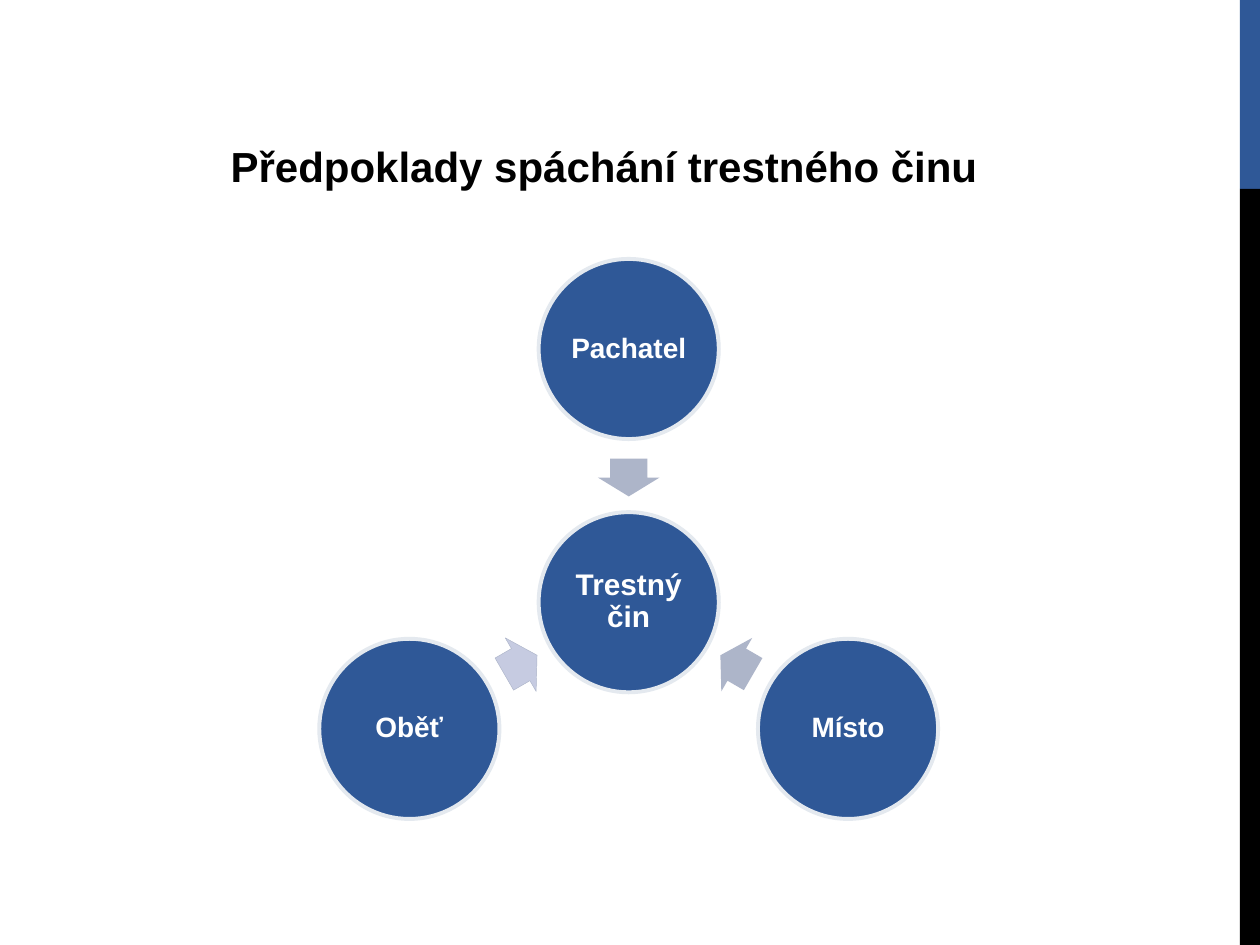
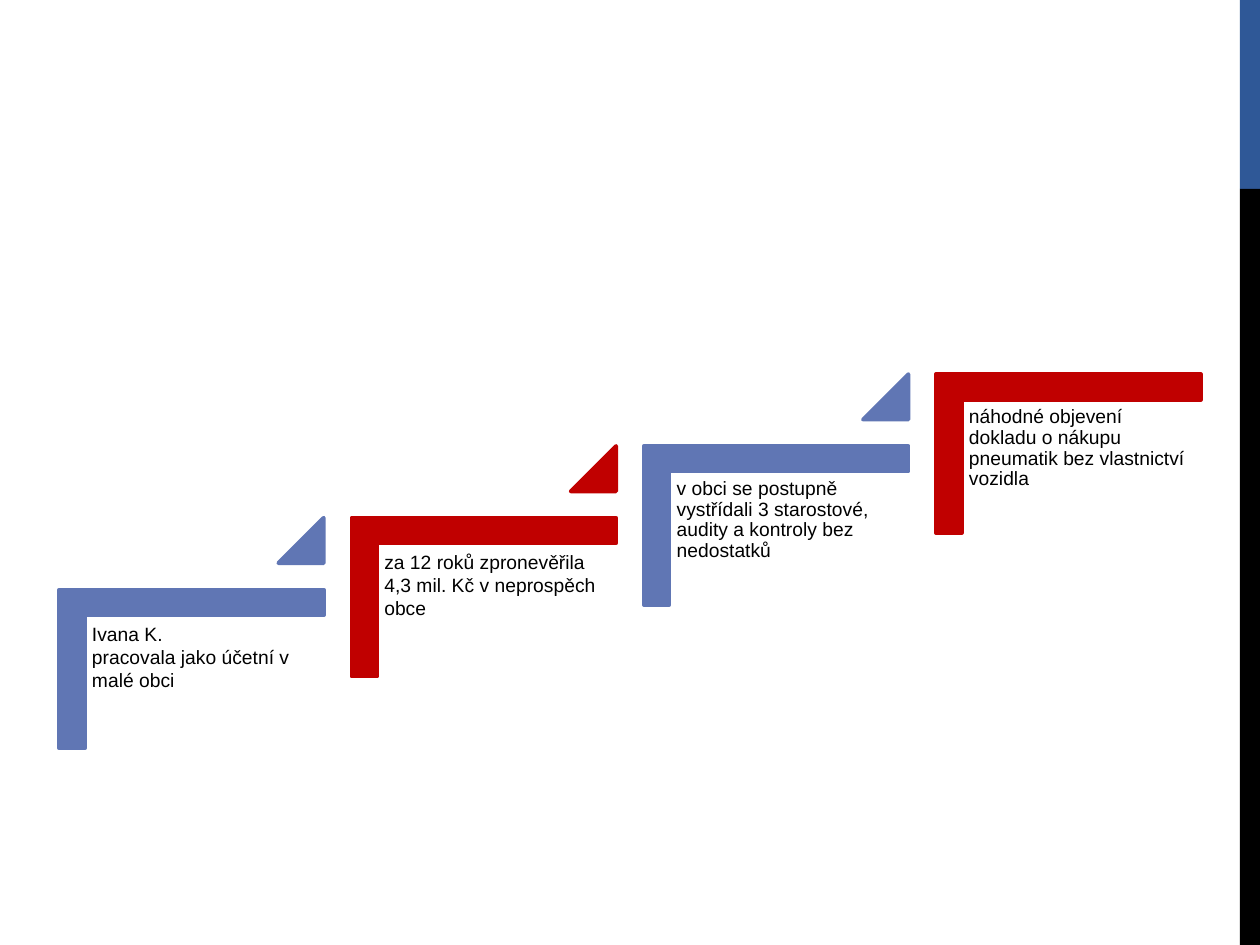
from math import cos, radians, sin

from pptx import Presentation
from pptx.dml.color import RGBColor
from pptx.enum.shapes import MSO_SHAPE
from pptx.enum.text import MSO_ANCHOR, PP_ALIGN
from pptx.util import Inches, Pt

FONT = "Arial"
BLUE = RGBColor(0x2F, 0x58, 0x97)
BLACK = RGBColor(0x00, 0x00, 0x00)
WHITE = RGBColor(0xFF, 0xFF, 0xFF)
PALE_RING = RGBColor(0xE4, 0xE9, 0xEF)
ARROW_GREY = RGBColor(0xAD, 0xB5, 0xC9)
ARROW_LIGHT = RGBColor(0xC6, 0xCB, 0xE1)
STEP_BLUE = RGBColor(0x60, 0x76, 0xB4)
STEP_RED = RGBColor(0xC0, 0x00, 0x00)

HUB_X, HUB_Y = 4.99, 4.78
CIRCLE_SIZE = 1.43
CIRCLE_DISTANCE = 2.01
ARROW_DISTANCE = 0.99
CAUSES = [
    ("Pachatel", 270, ARROW_GREY),
    ("Místo", 30, ARROW_GREY),
    ("Oběť", 150, ARROW_LIGHT),
]

STEP_X, STEP_Y = 0.68, 4.26
STEP_RUN, STEP_RISE = 2.32, 0.57
STEPS = [
    (["Ivana K.", "pracovala jako účetní v malé obci"], STEP_BLUE, 1.0),
    (["za 12 roků zpronevěřila 4,3 mil. Kč v neprospěch obce"], STEP_RED, 1.0),
    (["v obci se postupně vystřídali 3 starostové, audity a kontroly bez nedostatků"],
     STEP_BLUE, 0.9),
    (["náhodné objevení dokladu o nákupu pneumatik bez vlastnictví vozidla"],
     STEP_RED, 0.9),
]


def add_filled_shape(slide, kind, box, fill, line=None, line_width=2.25, adjustments=()):
    """Add a flat preset shape with an optional outline."""
    shape = slide.shapes.add_shape(kind, *(Inches(length) for length in box))
    shape.shadow.inherit = False
    shape.fill.solid()
    shape.fill.fore_color.rgb = fill
    if line is None:
        shape.line.fill.background()
    else:
        shape.line.color.rgb = line
        shape.line.width = Pt(line_width)
    for index, value in enumerate(adjustments):
        shape.adjustments[index] = value
    return shape


def write_text(shape, lines, size, color, bold=False, align=PP_ALIGN.LEFT,
               anchor=MSO_ANCHOR.TOP, inset=None, spacing=1.0):
    """Write one paragraph per line into a shape."""
    frame = shape.text_frame
    frame.word_wrap = True
    frame.vertical_anchor = anchor
    if inset is not None:
        frame.margin_left = frame.margin_right = Inches(inset)
        frame.margin_top = frame.margin_bottom = Inches(inset)
    for index, line in enumerate(lines):
        paragraph = frame.add_paragraph() if index else frame.paragraphs[0]
        paragraph.alignment = align
        paragraph.line_spacing = spacing
        run = paragraph.add_run()
        run.text = line
        run.font.name = FONT
        run.font.size = Pt(size)
        run.font.bold = bold
        run.font.color.rgb = color


def add_text_box(slide, box, lines, size, **style):
    """Add a wrapping text box with black text."""
    shape = slide.shapes.add_textbox(*(Inches(length) for length in box))
    write_text(shape, lines, size, BLACK, **style)


def add_base_slide(presentation):
    """Add a blank slide with the two-part band on its right edge."""
    slide = presentation.slides.add_slide(presentation.slide_layouts[6])
    add_filled_shape(slide, MSO_SHAPE.RECTANGLE, (9.84, 0, 0.16, 1.5), BLUE)
    add_filled_shape(slide, MSO_SHAPE.RECTANGLE, (9.84, 1.5, 0.16, 6), BLACK)
    return slide


def around_hub(angle, distance, width, height):
    """Return the box centred at an angle and distance from the hub."""
    x = HUB_X + distance * cos(radians(angle))
    y = HUB_Y + distance * sin(radians(angle))
    return x - width / 2, y - height / 2, width, height


def add_circle(slide, label, size, angle=0, distance=0):
    """Add a labelled circle around the hub."""
    box = around_hub(angle, distance, CIRCLE_SIZE, CIRCLE_SIZE)
    circle = add_filled_shape(slide, MSO_SHAPE.OVAL, box, BLUE, PALE_RING)
    write_text(circle, [label], size, WHITE, bold=True, align=PP_ALIGN.CENTER,
               anchor=MSO_ANCHOR.MIDDLE, inset=0.02, spacing=0.9)


def add_inward_arrow(slide, angle, fill):
    """Add a block arrow that points at the hub."""
    outline = ARROW_GREY if fill == ARROW_LIGHT else None
    arrow = add_filled_shape(slide, MSO_SHAPE.RIGHT_ARROW,
                             around_hub(angle, ARROW_DISTANCE, 0.3, 0.49),
                             fill, outline, 0.25, (0.6, 0.5))
    arrow.rotation = (angle + 180) % 360


def add_step(slide, index, lines, color, spacing):
    """Add one stair step, with a triangle unless it is the last."""
    x = STEP_X + index * STEP_RUN
    y = STEP_Y - index * STEP_RISE
    corner = add_filled_shape(slide, MSO_SHAPE.CORNER, (x + 0.21, y, 1.26, 2.1),
                              color, color, adjustments=(0.16, 0.16))
    corner.rotation = 90
    add_text_box(slide, (x, y + 0.63, 1.89, 1.66), lines, 11, inset=0.05, spacing=spacing)
    if index < len(STEPS) - 1:
        add_filled_shape(slide, MSO_SHAPE.ISOSCELES_TRIANGLE,
                         (x + 1.53, y - 0.15, 0.36, 0.36), color, color, adjustments=(1,))


def build_causes_slide(presentation):
    """Build the slide on what a crime requires."""
    slide = add_base_slide(presentation)
    add_circle(slide, "Trestný čin", 17)
    for label, angle, arrow_fill in CAUSES:
        add_inward_arrow(slide, angle, arrow_fill)
        add_circle(slide, label, 16, angle, CIRCLE_DISTANCE)
    add_text_box(slide, (0.83, 1.07, 7.93, 0.5), ["Předpoklady spáchání trestného činu"],
                 24, bold=True, align=PP_ALIGN.CENTER)


def build_case_slide(presentation):
    """Build the slide with the rising steps of the case."""
    slide = add_base_slide(presentation)
    for index, (lines, color, spacing) in enumerate(STEPS):
        add_step(slide, index, lines, color, spacing)


def main():
    """Build and save the presentation."""
    presentation = Presentation()
    presentation.slide_width = Inches(10)
    presentation.slide_height = Inches(7.5)
    build_causes_slide(presentation)
    build_case_slide(presentation)
    presentation.save("out.pptx")


if __name__ == "__main__":
    main()
